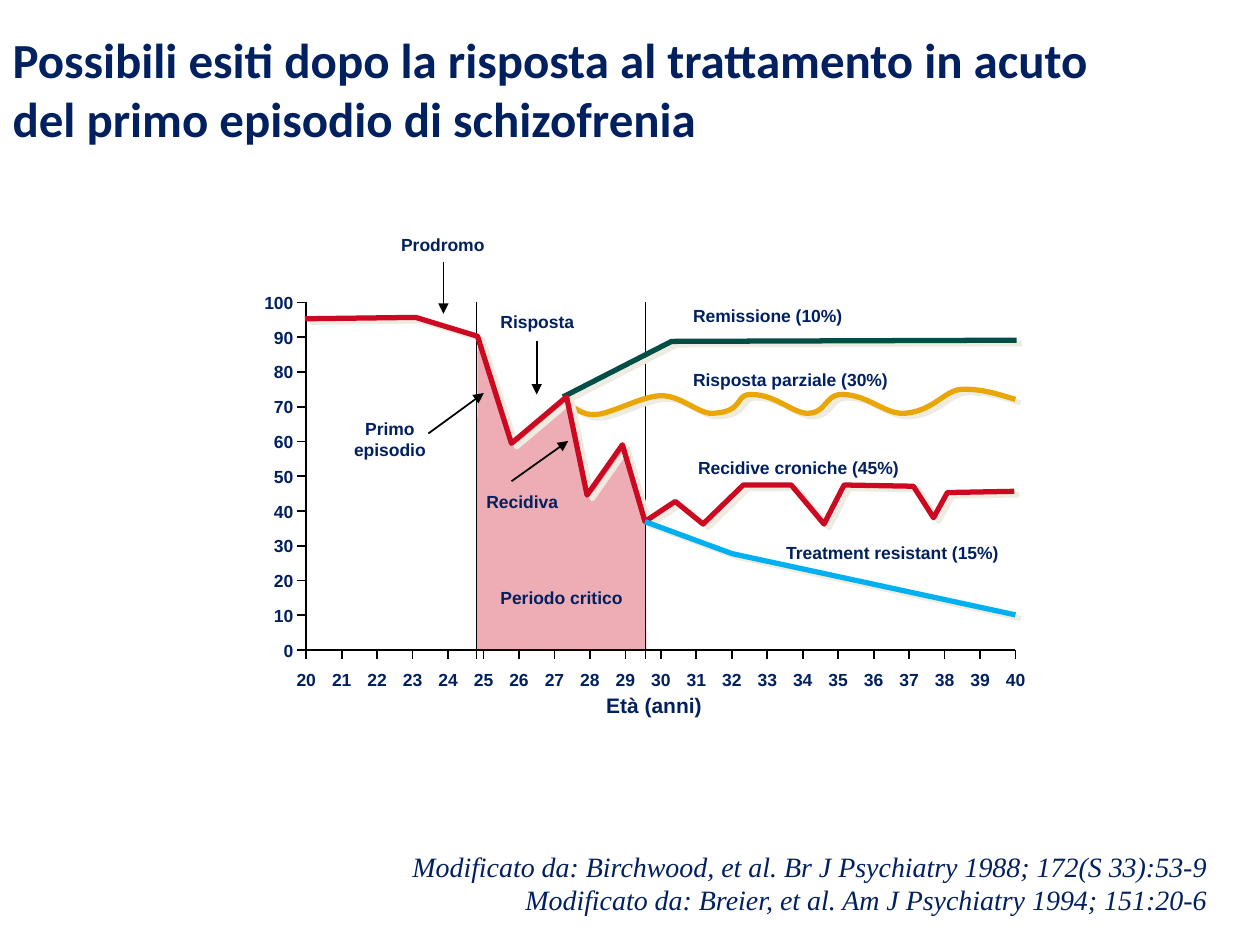
import pptx
import pptx.dml.color
import pptx.enum.shapes
import pptx.enum.text
import pptx.oxml.ns
import pptx.oxml.xmlchemy
import pptx.util

Pt = pptx.util.Pt
RGBColor = pptx.dml.color.RGBColor
ALIGN = pptx.enum.text.PP_ALIGN

NAVY = RGBColor(0x00, 0x20, 0x60)
BLACK = RGBColor(0x00, 0x00, 0x00)
RED = RGBColor(0xCD, 0x09, 0x21)
AMBER = RGBColor(0xEA, 0xA6, 0x05)
GREEN = RGBColor(0x00, 0x4E, 0x45)
BLUE = RGBColor(0x00, 0xB0, 0xF0)
IVORY = RGBColor(0xEE, 0xEC, 0xE1)

# Plot area, in points
LEFT, RIGHT, TOP, BASE = 175, 580.3, 172.8, 371.5
TICK = 5
AGES = range(20, 41)
SCORES = range(0, 101, 10)

RELAPSE = [(174.2, 182.2), (237.6, 181.4), (272.9, 192.2), (292.3, 253.4),
           (323.8, 226.8), (335.5, 283), (355.7, 254.2), (368.6, 298.1),
           (385.9, 286.6), (401.8, 299.5), (424.8, 277.2), (452.2, 277.2),
           (470.9, 299.5), (482.4, 277.2), (522, 277.9), (533.5, 295.9),
           (541.4, 281.5), (579.6, 280.8)]
REMISSION = [(581, 194.4), (383.8, 195.1), (321.8, 226.8)]
RESISTANT = [(580.3, 351.4), (418.3, 316.4), (368.6, 298.1)]
CRITICAL = RELAPSE[2:8] + [(369.4, 370.8), (272.2, 370.8)]

# Start point, then two control points and an end point per wave
PARTIAL = [(323.3, 229.7),
           (326.2, 231.1), (331.9, 237.6), (340.6, 236.9),
           (349.9, 236.2), (367.2, 226.1), (378, 226.1),
           (389.5, 226.1), (399.6, 236.9), (407.5, 236.2),
           (425.5, 235.4), (419.8, 225.4), (429.1, 225.4),
           (443.5, 225.4), (452.9, 236.2), (461.5, 236.2),
           (472.3, 236.2), (471.6, 225.4), (481, 225.4),
           (496.1, 225.4), (505.4, 236.9), (517, 236.2),
           (534.2, 234.7), (539.3, 223.2), (549.4, 222.5),
           (562.3, 221.8), (574.6, 226.8), (580.3, 228.2)]

LABELS = [
    ("Prodromo", 227.5, 133.9, 51, ALIGN.CENTER),
    ("Risposta", 281.5, 177.8, 51, ALIGN.CENTER),
    ("Recidiva", 277.9, 280.8, 51, ALIGN.LEFT),
    ("Primo episodio", 197.3, 239, 51, ALIGN.CENTER),
    ("Remissione (10%)", 396, 174.2, 104, ALIGN.LEFT),
    ("Risposta parziale (30%)", 396, 211, 112, ALIGN.LEFT),
    ("Recidive croniche (45%)", 398.9, 261.4, 144, ALIGN.LEFT),
    ("Periodo critico", 275.8, 335.5, 90, ALIGN.CENTER),
    ("Treatment resistant (15%)", 449.3, 309.6, 130, ALIGN.LEFT),
]
ARROWS = [(306.7, 195.1, 306.7, 225.4), (253.4, 149.8, 253.4, 179.3),
          (244.8, 247.7, 276.5, 224.6), (292.3, 275, 324.7, 252)]


def smooth_points(controls, steps=12):
    """Points along a chain of cubic curves."""
    points = [controls[0]]
    for first in range(0, len(controls) - 1, 3):
        a, b, c, d = controls[first:first + 4]
        for step in range(1, steps + 1):
            t = step / steps
            u = 1 - t
            points.append(tuple(
                u**3 * a[i] + 3 * u**2 * t * b[i] + 3 * u * t**2 * c[i] + t**3 * d[i]
                for i in (0, 1)))
    return points


def add_xml(parent, tag, **attributes):
    child = pptx.oxml.xmlchemy.OxmlElement(tag)
    for name, value in attributes.items():
        child.set(name, str(value))
    parent.append(child)
    return child


class Painter:
    def __init__(self, page, font="Arial", size=10, color=NAVY):
        self.page = page
        self.font, self.size, self.color = font, size, color

    def format_text(self, frame, align, size=None, font=None, bold=True, italic=False):
        for para in frame.paragraphs:
            para.alignment = align
            for span in para.runs:
                span.font.name = font or self.font
                span.font.size = Pt(size or self.size)
                span.font.bold, span.font.italic = bold, italic
                span.font.color.rgb = self.color

    def title(self, text, left, top, width, height):
        box = self.page.shapes.title
        box.left, box.top, box.width, box.height = map(Pt, (left, top, width, height))
        frame = box.text_frame
        frame.text = text
        frame.auto_size = pptx.enum.text.MSO_AUTO_SIZE.NONE
        frame.vertical_anchor = pptx.enum.text.MSO_ANCHOR.TOP
        frame.margin_top = Pt(18.5)
        self.format_text(frame, ALIGN.LEFT, 28, "Calibri")

    def text(self, text, left, top, width, height, align, **style):
        box = self.page.shapes.add_textbox(*map(Pt, (left, top, width, height)))
        frame = box.text_frame
        frame.word_wrap = True
        frame.margin_left = frame.margin_right = frame.margin_top = frame.margin_bottom = 0
        frame.text = text
        self.format_text(frame, align, **style)

    def line(self, x1, y1, x2, y2, width=1, arrow=False):
        line = self.page.shapes.add_connector(
            pptx.enum.shapes.MSO_CONNECTOR.STRAIGHT, *map(Pt, (x1, y1, x2, y2)))
        line.line.color.rgb = BLACK
        line.line.width = Pt(width)
        if arrow:
            add_xml(line.get_or_add_ln(), "a:tailEnd", type="triangle")
        add_xml(line._element.spPr, "a:effectLst")

    def outline(self, points, closed=False):
        start, *others = [(Pt(x), Pt(y)) for x, y in points]
        builder = self.page.shapes.build_freeform(*start)
        builder.add_line_segments(others, close=closed)
        shape = builder.convert_to_shape()
        shape.shadow.inherit = False
        return shape

    def area(self, points, color, opacity):
        shape = self.outline(points, closed=True)
        shape.fill.solid()
        shape.fill.fore_color.rgb = color
        shape.line.fill.background()
        tint = shape._element.xpath("./p:spPr/a:solidFill/a:srgbClr")[0]
        add_xml(tint, "a:alpha", val=opacity * 1000)

    def curve(self, points, color):
        shape = self.outline(points)
        shape.fill.background()
        shape.line.color.rgb = color
        shape.line.width = Pt(3)
        effects = shape._element.spPr.find(pptx.oxml.ns.qn("a:effectLst"))
        shadow = add_xml(effects, "a:outerShdw", dist=Pt(3.6), dir=34 * 60000,
                         algn="ctr", rotWithShape=0)
        add_xml(shadow, "a:srgbClr", val=IVORY)


def main():
    deck = pptx.Presentation()
    deck.slide_width, deck.slide_height = Pt(720), Pt(540)
    page = deck.slides.add_slide(deck.slide_layouts[5])
    painter = Painter(page)

    # Title and sources
    painter.title("Possibili esiti dopo la risposta al trattamento in acuto "
                  "del primo episodio di schizofrenia", 0, -1.5, 648, 135.5)
    painter.text("Modificato da: Birchwood, et al. Br J Psychiatry 1988; 172(S 33):53-9\n"
                 "Modificato da: Breier, et al. Am J Psychiatry 1994; 151:20-6",
                 93.6, 485.3, 596.2, 38.8, ALIGN.RIGHT,
                 size=16, font="Times New Roman", bold=False, italic=True)

    # Critical period
    painter.area(CRITICAL, RED, 33)

    # Axes with ticks and numbers
    painter.line(LEFT, TOP, LEFT, BASE + TICK)
    painter.line(RIGHT, BASE, LEFT - TICK, BASE)
    for score in SCORES:
        y = BASE - (BASE - TOP) * score / SCORES[-1]
        if score:
            painter.line(LEFT - TICK, y, LEFT, y)
        painter.text(str(score), 147.6, y - 6, 20, 13, ALIGN.RIGHT)
    for index, age in enumerate(AGES):
        x = LEFT + (RIGHT - LEFT) * index / (len(AGES) - 1)
        if index:
            painter.line(x, BASE, x, BASE + TICK)
        painter.text(str(age), x - 10, 382.3, 20, 13, ALIGN.CENTER)
    painter.text("Età (anni)", 171.4, 395.5, 404.6, 18, ALIGN.CENTER, size=12)

    # Limits of the critical period
    for x in (272.2, 368.9):
        painter.line(x, TOP, x, BASE + TICK, width=0.5)

    # Outcome curves
    painter.curve(smooth_points(PARTIAL), AMBER)
    painter.curve(REMISSION, GREEN)
    painter.curve(RELAPSE, RED)
    painter.curve(RESISTANT, BLUE)

    # Labels and arrows
    for text, left, top, width, align in LABELS:
        painter.text(text, left, top, width, 15, align)
    for ends in ARROWS:
        painter.line(*ends, arrow=True)

    deck.save("out.pptx")


if __name__ == "__main__":
    main()
